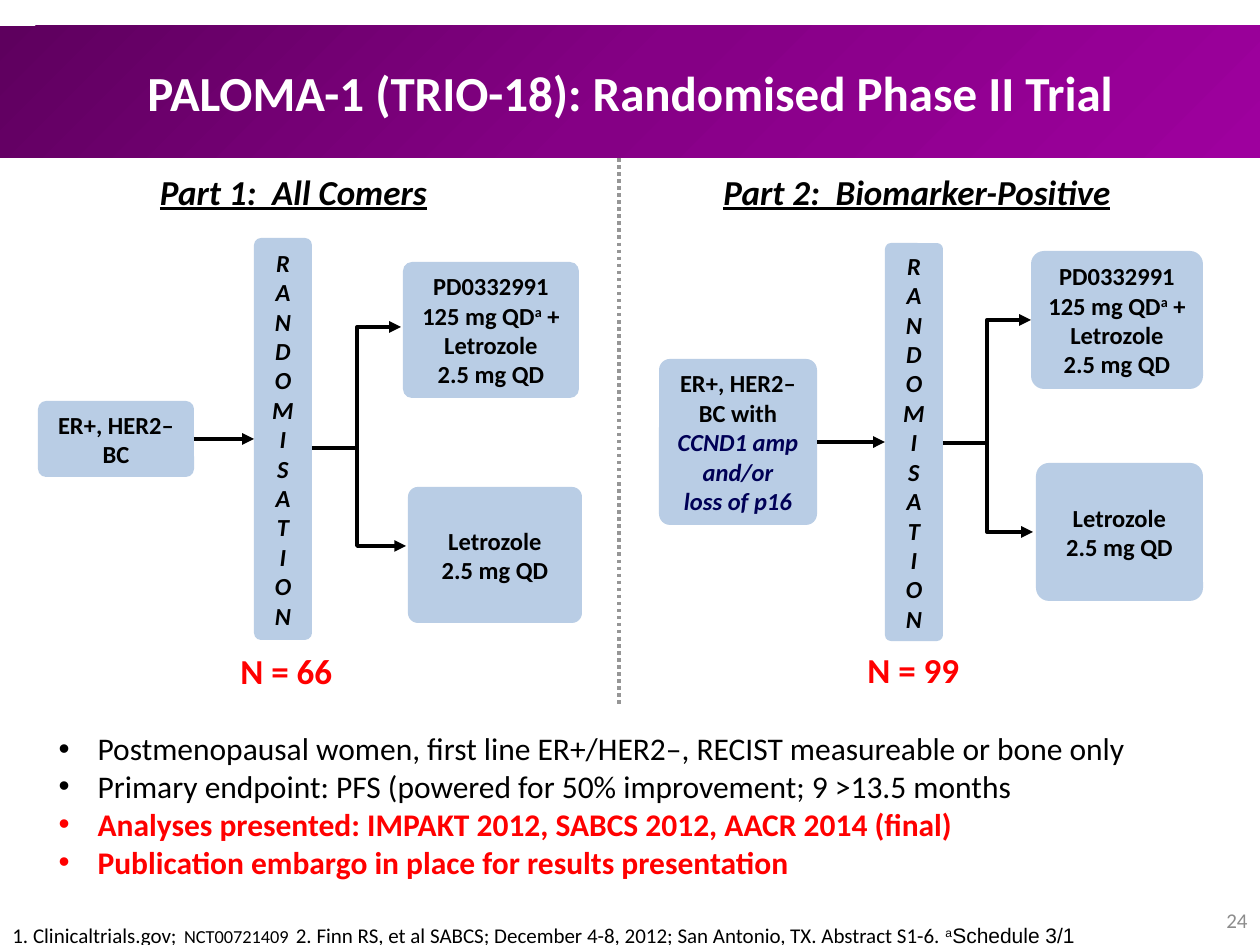
from copy import deepcopy

from lxml import etree
from pptx import Presentation
from pptx.dml.color import RGBColor
from pptx.enum.dml import MSO_LINE
from pptx.enum.shapes import MSO_CONNECTOR, MSO_SHAPE
from pptx.enum.text import MSO_ANCHOR, MSO_AUTO_SIZE, PP_ALIGN
from pptx.oxml.ns import qn
from pptx.util import Emu, Inches, Pt

PX = 914400 / 126
BLACK = RGBColor(0x00, 0x00, 0x00)
WHITE = RGBColor(0xFF, 0xFF, 0xFF)
RED = RGBColor(0xFF, 0x00, 0x00)
NAVY = RGBColor(0x00, 0x00, 0x56)
GREY = RGBColor(0x8C, 0x8C, 0x8C)
DIVIDER_GREY = RGBColor(0x96, 0x96, 0x96)
BOX_BLUE = RGBColor(0xB9, 0xCD, 0xE5)
PURPLES = ((0, RGBColor(0x5E, 0x00, 0x5E)),
           (0.5, RGBColor(0x85, 0x00, 0x85)),
           (1, RGBColor(0x9E, 0x00, 0x9E)))
LEFT, CENTER, RIGHT = PP_ALIGN.LEFT, PP_ALIGN.CENTER, PP_ALIGN.RIGHT
TOP, MIDDLE = MSO_ANCHOR.TOP, MSO_ANCHOR.MIDDLE
NO_AUTOFIT = MSO_AUTO_SIZE.NONE
ROUNDED = MSO_SHAPE.ROUNDED_RECTANGLE
STRAIGHT, ELBOW = MSO_CONNECTOR.STRAIGHT, MSO_CONNECTOR.ELBOW
DOTTED = MSO_LINE.ROUND_DOT
LEFT_SIDE, RIGHT_SIDE = 1, 3

BOLD = {"size": 14, "bold": True}
BOLD_ITALIC = {**BOLD, "italic": True}
MARKER = {**BOLD_ITALIC, "color": NAVY}
HEADING = {"size": 20, "bold": True, "italic": True, "underline": True}
COUNT = {"size": 20, "bold": True, "color": RED}
PLAIN_BULLET = {"size": 18}
RED_BULLET = {"size": 18, "bold": True, "color": RED}

RANDOMISATION = [[(letter, BOLD_ITALIC)] for letter in "RANDOMISATION"]
COMBINATION = [
    [("PD0332991 125 mg QD", BOLD), ("a", {**BOLD, "raised": True}),
     (" + Letrozole", BOLD)],
    [("2.5 mg QD", BOLD)],
]
LETROZOLE = [[("Letrozole", BOLD)], [("2.5 mg QD", BOLD)]]

PARTS = [
    {
        "heading": ("Part 1:  All Comers", (37, 164, 513, 55)),
        "count": ("N = 66", (228, 643, 118, 55)),
        "patients": ([[("ER+, HER2–", BOLD)], [("BC", BOLD)]],
                     (38, 401, 156, 76), 8),
        "randomisation": ((254, 238, 58, 402), 7),
        "combination": ((403, 262, 176, 136), 9),
        "letrozole": ((408, 487, 174, 136), 10),
        "fork": (312, 448, 357),
        "arms": ((401, 327), (406, 546)),
    },
    {
        "heading": ("Part 2:  Biomarker-Positive", (650, 164, 534, 55)),
        "count": ("N = 99", (855, 642, 118, 55)),
        "patients": ([[("ER+, HER2– BC with", BOLD)],
                      [("CCND1 amp and/or", MARKER)],
                      [("loss of p16", MARKER)]],
                     (659, 359, 158, 166), 11),
        "randomisation": ((885, 243, 58, 398), 6),
        "combination": ((1031, 251, 172, 138), 13),
        "letrozole": ((1036, 463, 167, 138), 13),
        "fork": (943, 443, 987),
        "arms": ((1031, 320), (1033, 532)),
    },
]

BULLETS = [
    [("Postmenopausal women, first line ER+/HER2–, RECIST measureable or bone only",
      PLAIN_BULLET)],
    [("Primary endpoint: PFS (powered for 50% improvement; 9 >13.5 months",
      PLAIN_BULLET)],
    [("Analyses presented: IMPAKT 2012, SABCS 2012, AACR 2014 (final)", RED_BULLET)],
    [("Publication embargo in place for results presentation", RED_BULLET)],
]
REFERENCES = [[
    ("1. Clinicaltrials.gov;", {"size": 12}),
    (" ", {"size": 18}),
    ("NCT00721409", {"size": 10.5}),
    (" ", {"size": 18}),
    ("2. Finn RS, et al SABCS; December 4-8, 2012; San Antonio, TX. Abstract S1-6. ",
     {"size": 12}),
    ("a", {"size": 12, "font": "Arial", "raised": True}),
    ("Schedule 3/1", {"size": 12, "font": "Arial"}),
]]


def px(*lengths):
    return [Emu(round(length * PX)) for length in lengths]


def add_run(paragraph, text, size, color=BLACK, bold=False, italic=False,
            underline=False, font="Calibri", raised=False):
    run = paragraph.add_run()
    run.text = text
    run.font.name = font
    run.font.size = Pt(size)
    run.font.color.rgb = color
    run.font.bold = bold
    run.font.italic = italic
    run.font.underline = underline
    if raised:
        run.font._element.set("baseline", "30000")


def write(frame, paragraphs, align=LEFT, anchor=TOP, wrap=True):
    frame.word_wrap = wrap
    frame.vertical_anchor = anchor
    for index, runs in enumerate(paragraphs):
        paragraph = frame.add_paragraph() if index else frame.paragraphs[0]
        paragraph.alignment = align
        paragraph.space_before = Pt(0)
        for text, style in runs:
            add_run(paragraph, text, **style)


def place(shape, bounds):
    shape.left, shape.top, shape.width, shape.height = px(*bounds)


def fill_title(title):
    place(title, (0, 26, 1260, 132))
    title.fill.gradient()
    title.fill.gradient_angle = 315
    stop_list = title._element.spPr.find(qn("a:gradFill")).find(qn("a:gsLst"))
    stop_list.append(deepcopy(stop_list[-1]))
    for stop, (position, color) in zip(title.fill.gradient_stops, PURPLES):
        stop.position = position
        stop.color.rgb = color
    title.text_frame.auto_size = NO_AUTOFIT
    write(title.text_frame, [[("PALOMA-1 (TRIO-18): Randomised Phase II Trial",
                               {"size": 28, "bold": True, "color": WHITE})]],
          CENTER, MIDDLE)


def fill_bullets(body):
    place(body, (46, 723, 1109, 165))
    body.text_frame.auto_size = NO_AUTOFIT
    write(body.text_frame, BULLETS)
    for paragraph in body.text_frame.paragraphs:
        properties = paragraph._p.get_or_add_pPr()
        properties.set("marL", str(Inches(0.31)))
        properties.set("indent", str(-Inches(0.31)))


def add_text(shapes, bounds, paragraphs, **layout):
    write(shapes.add_textbox(*px(*bounds)).text_frame, paragraphs, **layout)


def add_box(shapes, paragraphs, bounds, radius):
    box = shapes.add_shape(ROUNDED, *px(*bounds))
    box.adjustments[0] = radius / min(bounds[2:])
    box.shadow.inherit = False
    box.fill.solid()
    box.fill.fore_color.rgb = BOX_BLUE
    box.line.fill.background()
    frame = box.text_frame
    frame.margin_left = frame.margin_right = Inches(0.05)
    frame.margin_top = frame.margin_bottom = Inches(0.05)
    write(frame, paragraphs, CENTER, MIDDLE)
    return box


def add_line(shapes, kind, start, end, color=BLACK, width=2.25, arrow=True):
    line = shapes.add_connector(kind, *px(*start, *end))
    line.line.color.rgb = color
    line.line.width = Pt(width)
    if arrow:
        etree.SubElement(line.line._get_or_add_ln(), qn("a:tailEnd"), type="triangle")
    etree.SubElement(line._element.spPr, qn("a:effectLst"))
    return line


def add_branch(shapes, start, bend_x, end):
    branch = add_line(shapes, ELBOW, start, end)
    share = round((bend_x - start[0]) / (end[0] - start[0]) * 100000)
    guides = branch._element.spPr.find(qn("a:prstGeom")).get_or_add_avLst()
    etree.SubElement(guides, qn("a:gd"), name="adj1", fmla=f"val {share}")


def add_part(shapes, part):
    heading, heading_bounds = part["heading"]
    add_text(shapes, heading_bounds, [[(heading, HEADING)]], align=CENTER)
    count, count_bounds = part["count"]
    add_text(shapes, count_bounds, [[(count, COUNT)]], wrap=False)
    patients = add_box(shapes, *part["patients"])
    randomisation = add_box(shapes, RANDOMISATION, *part["randomisation"])
    add_box(shapes, COMBINATION, *part["combination"])
    add_box(shapes, LETROZOLE, *part["letrozole"])
    enrolment = add_line(shapes, STRAIGHT, (0, 0), (0, 0))
    enrolment.begin_connect(patients, RIGHT_SIDE)
    enrolment.end_connect(randomisation, LEFT_SIDE)
    fork_x, fork_y, bend_x = part["fork"]
    for arm in part["arms"]:
        add_branch(shapes, (fork_x, fork_y), bend_x, arm)


def main():
    presentation = Presentation()
    presentation.slide_width, presentation.slide_height = px(1260, 945)
    slide = presentation.slides.add_slide(presentation.slide_layouts[1])
    shapes = slide.shapes
    fill_title(shapes.title)
    fill_bullets(slide.placeholders[1])
    for part in PARTS:
        add_part(shapes, part)
    divider = add_line(shapes, STRAIGHT, (619, 158), (619, 706),
                       DIVIDER_GREY, 2, arrow=False)
    divider.line.dash_style = DOTTED
    add_text(shapes, (0, 906, 1221, 77), REFERENCES)
    add_text(shapes, (966, 895, 294, 50), [[("24", {"size": 12, "color": GREY})]],
             align=RIGHT, anchor=MIDDLE)
    presentation.save("out.pptx")


if __name__ == "__main__":
    main()
